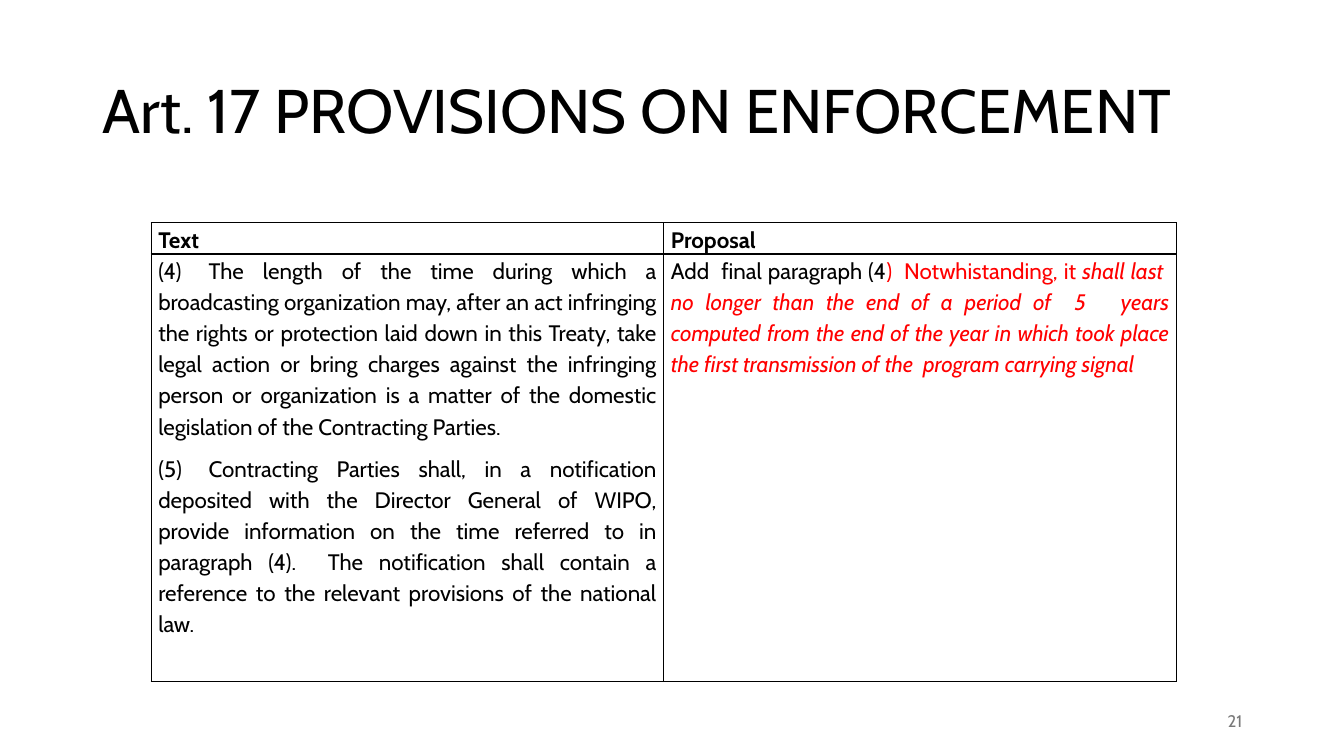
import pptx
import pptx.util
import pptx.dml.color
import pptx.enum.text
import pptx.oxml
import pptx.oxml.ns

Inches = pptx.util.Inches
Pt = pptx.util.Pt
RGBColor = pptx.dml.color.RGBColor
ALIGN = pptx.enum.text.PP_ALIGN
MIDDLE = pptx.enum.text.MSO_ANCHOR.MIDDLE

BLACK = RGBColor(0x00, 0x00, 0x00)
RED = RGBColor(0xFF, 0x00, 0x00)
GRAY = RGBColor(0x79, 0x79, 0x79)

LENGTH = (
    "(4)\tThe length of the time during which a broadcasting organization may, "
    "after an act infringing the rights or protection laid down in this Treaty, "
    "take legal action or bring charges against the infringing person or "
    "organization is a matter of the domestic legislation of the Contracting Parties."
)
NOTICE = (
    "(5)\tContracting Parties shall, in a notification deposited with the Director "
    "General of WIPO, provide information on the time referred to in paragraph (4).  "
    "The notification shall contain a reference to the relevant provisions of the "
    "national law. "
)
LIMIT = (
    "shall last  no longer than the end of a period of  5   years computed from the "
    "end of the year in which took place the first transmission of the  program "
    "carrying signal "
)


class Deck:
    font = "Cabin"
    body = 16

    def __init__(self):
        self.show = pptx.Presentation()
        self.show.slide_width = Inches(13.33)
        self.show.slide_height = Inches(7.5)
        self.slide = self.show.slides.add_slide(self.show.slide_layouts[6])

    def style(self, run, size, color=BLACK, bold=False, italic=False):
        run.font.name = self.font
        run.font.size = Pt(size)
        run.font.color.rgb = color
        run.font.bold = bold
        run.font.italic = italic

    def text(self, box, words, size, color=BLACK, align=ALIGN.LEFT, space=1.0):
        frame = self.slide.shapes.add_textbox(*map(Inches, box)).text_frame
        frame.word_wrap = True
        frame.vertical_anchor = MIDDLE
        frame.text = words
        line = frame.paragraphs[0]
        line.alignment = align
        line.line_spacing = space
        self.style(line.runs[0], size, color)

    def border(self, cell):
        props = cell._tc.get_or_add_tcPr()
        for spot, side in enumerate(("lnL", "lnR", "lnT", "lnB")):
            edge = pptx.oxml.parse_xml(
                f'<a:{side} {pptx.oxml.ns.nsdecls("a")} w="{Pt(1)}">'
                f'<a:solidFill><a:srgbClr val="{BLACK}"/></a:solidFill></a:{side}>'
            )
            props.insert(spot, edge)

    def cell(self, cell, paras, align):
        cell.fill.background()
        self.border(cell)
        cell.margin_left = cell.margin_right = Inches(0.07)
        cell.margin_top = cell.margin_bottom = 0
        frame = cell.text_frame
        for index, parts in enumerate(paras):
            para = frame.add_paragraph() if index else frame.paragraphs[0]
            para.alignment = align
            para.line_spacing = 1.15
            para.space_after = Pt(8)
            for words, look in parts:
                run = para.add_run()
                run.text = words
                self.style(run, self.body, **look)

    def table(self, box, highs, rows):
        grid = self.slide.shapes.add_table(
            len(rows), len(rows[0]), *map(Inches, box)
        ).table
        grid.first_row = grid.horz_banding = False
        for r, row in enumerate(rows):
            grid.rows[r].height = Inches(highs[r])
            for c, paras in enumerate(row):
                align = ALIGN.JUSTIFY if r else ALIGN.LEFT
                self.cell(grid.cell(r, c), paras, align)

    def save(self):
        self.show.save("out.pptx")


def main():
    deck = Deck()
    deck.text((0.92, 0.4, 11.5, 1.45), "Art. 17 PROVISIONS ON ENFORCEMENT", 44, space=0.9)
    deck.text((9.42, 6.95, 3, 0.4), "21", 12, GRAY, ALIGN.RIGHT)
    heads = [[[(name, {"bold": True})]] for name in ("Text", "Proposal")]
    treaty = [[(LENGTH, {})], [(NOTICE, {})]]
    change = [[
        ("Add  final paragraph (4", {}),
        (")  Notwhistanding, it ", {"color": RED}),
        (LIMIT, {"color": RED, "italic": True}),
    ]]
    deck.table((1.5, 2.21, 10.17, 4.55), (0.31, 4.24), [heads, [treaty, change]])
    deck.save()


if __name__ == "__main__":
    main()
